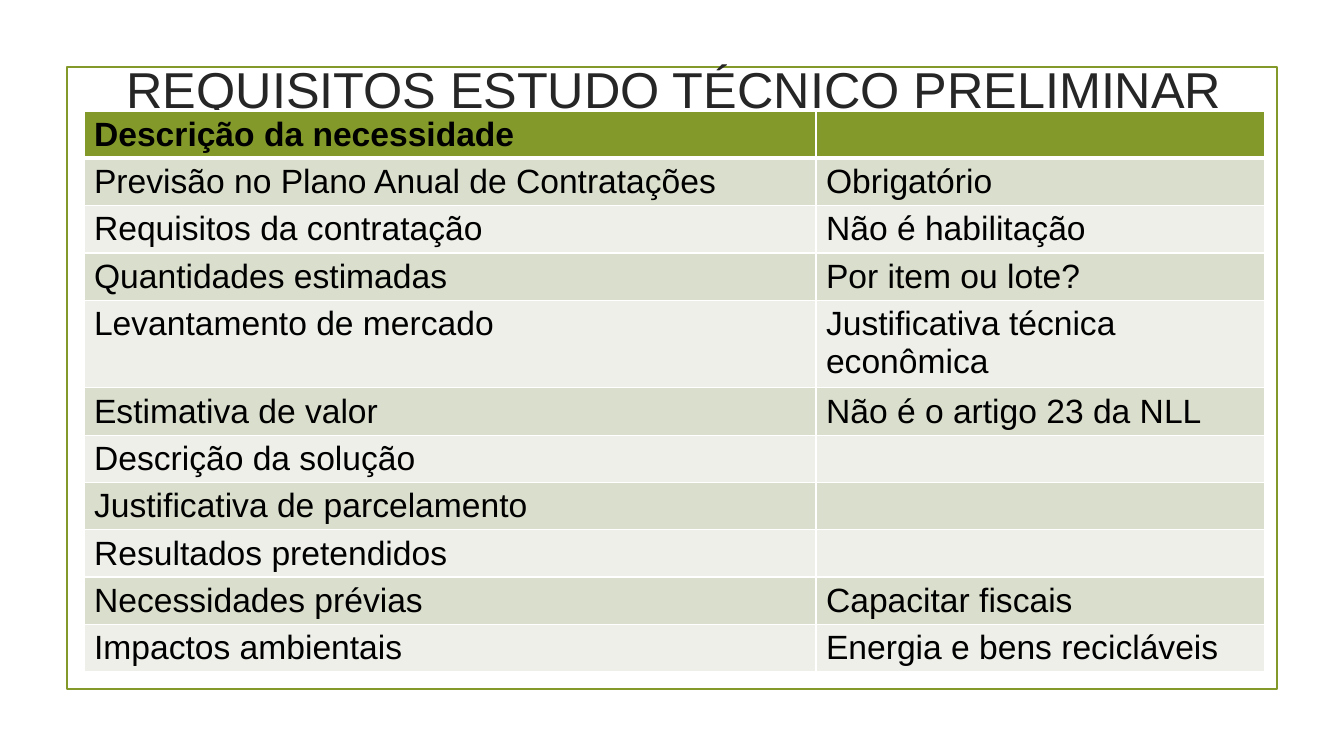
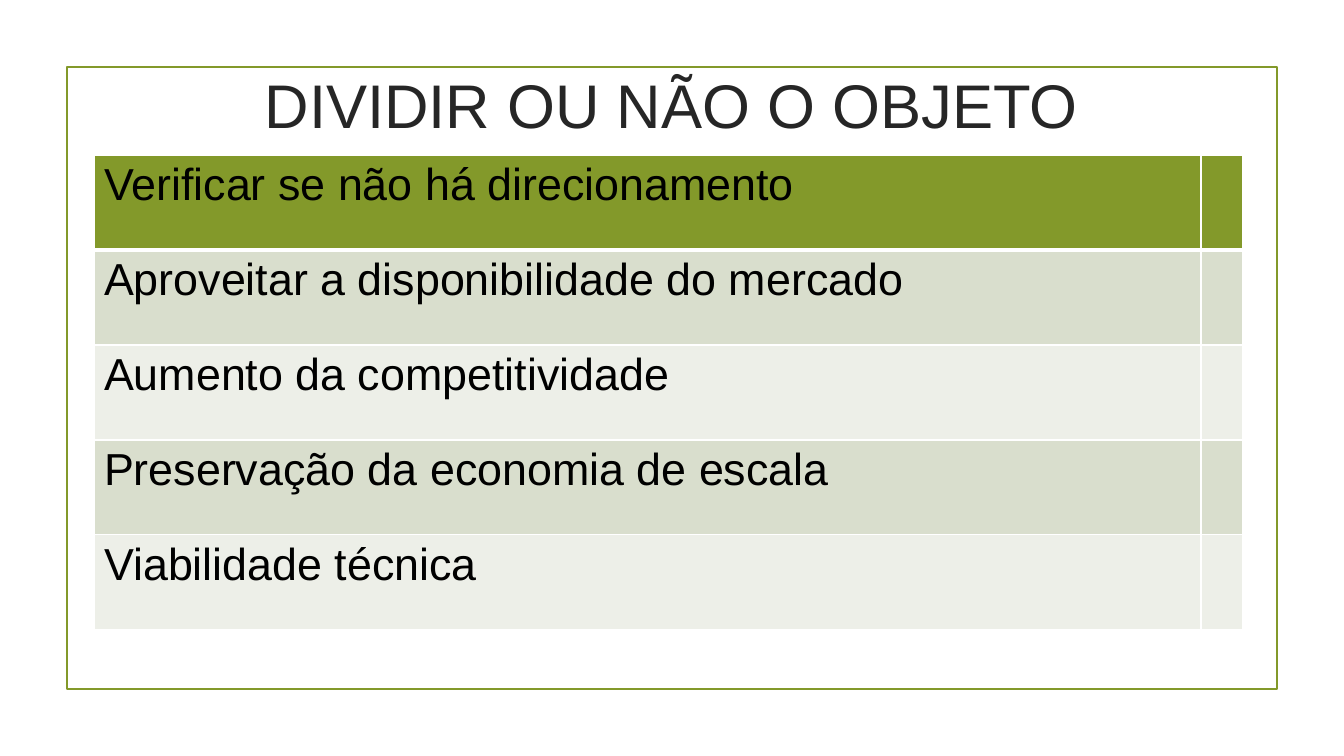
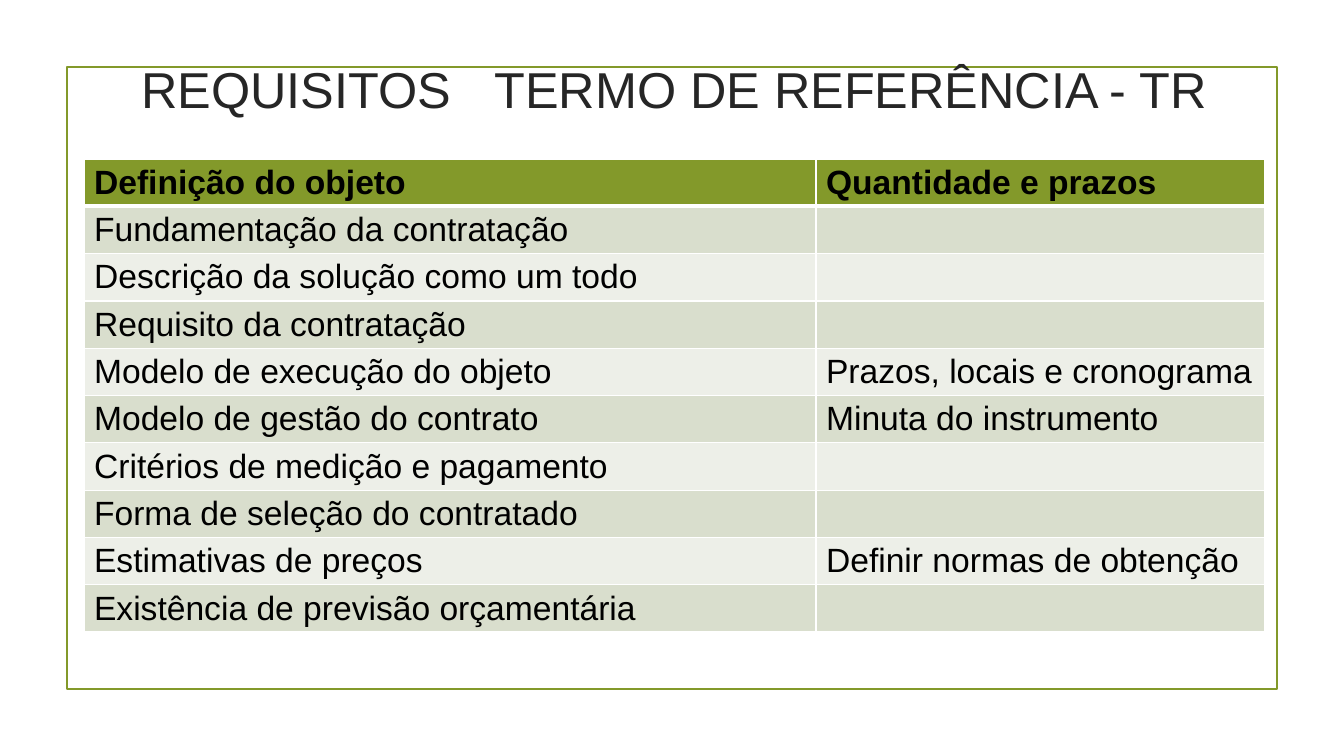
import dataclasses

import pptx
import pptx.dml.color
import pptx.enum.shapes
import pptx.enum.text
import pptx.oxml.ns
import pptx.util
from lxml import etree

SLIDE_WIDTH, SLIDE_HEIGHT = 1344, 756
EMU_PER_PX = 12192000 / SLIDE_WIDTH


@dataclasses.dataclass(frozen=True)
class Theme:
    font: str = "Arial"
    accent: str = "83992A"
    title: str = "262626"
    body: str = "000000"
    grid: str = "FFFFFF"
    bands: tuple = ("D9DECD", "EDEFE8")
    frame_line: float = 1.25
    grid_line: int = 1
    header_line: int = 3
    title_size: int = 36
    title_size_large: int = 44
    cell_size: int = 24
    cell_size_large: int = 32


THEME = Theme()

# Boxes are left, top, width, height
FRAME = (67, 67, 1210, 622)
WIDE_TITLE = (84, 16, 1181, 144)
NARROW_TITLE = (143, 32, 1058, 144)
TITLE_TAB = 353
WIDE_COLUMNS = (732, 449)
CELL_MARGIN_TOP, CELL_MARGIN_BOTTOM = 5, 2

STUDY_ROWS = [
    ("Descrição da necessidade", ""),
    ("Previsão no Plano Anual de Contratações", "Obrigatório"),
    ("Requisitos da contratação", "Não é habilitação"),
    ("Quantidades estimadas", "Por item ou lote?"),
    ("Levantamento de mercado", "Justificativa técnica econômica"),
    ("Estimativa de valor", "Não é o artigo 23 da NLL"),
    ("Descrição da solução", ""),
    ("Justificativa de parcelamento", ""),
    ("Resultados pretendidos", ""),
    ("Necessidades prévias", "Capacitar fiscais"),
    ("Impactos ambientais", "Energia e bens recicláveis"),
]
DIVISION_ROWS = [
    ("Verificar se não há direcionamento", ""),
    ("Aproveitar a disponibilidade do mercado", ""),
    ("Aumento da competitividade", ""),
    ("Preservação da economia de escala", ""),
    ("Viabilidade técnica", ""),
]
REFERENCE_ROWS = [
    ("Definição do objeto", "Quantidade e prazos"),
    ("Fundamentação da contratação", ""),
    ("Descrição da solução como um todo", ""),
    ("Requisito da contratação", ""),
    ("Modelo de execução do objeto", "Prazos, locais e cronograma"),
    ("Modelo de gestão do contrato", "Minuta do instrumento"),
    ("Critérios de medição e pagamento", ""),
    ("Forma de seleção do contratado", ""),
    ("Estimativas de preços", "Definir normas de obtenção"),
    ("Existência de previsão orçamentária", ""),
]


def px(length):
    return pptx.util.Emu(round(length * EMU_PER_PX))


def rgb(value):
    return pptx.dml.color.RGBColor.from_string(value)


def add_span(para, text, size, color, bold=False):
    span = para.add_run()
    span.text = text
    span.font.name = THEME.font
    span.font.size = pptx.util.Pt(size)
    span.font.bold = bold
    span.font.color.rgb = rgb(color)


def add_frame(page, box):
    frame = page.shapes.add_shape(
        pptx.enum.shapes.MSO_SHAPE.RECTANGLE, *map(px, box))
    frame.shadow.inherit = False
    frame.fill.background()
    frame.line.color.rgb = rgb(THEME.accent)
    frame.line.width = pptx.util.Pt(THEME.frame_line)


def add_title(page, box, text, size):
    text_frame = page.shapes.add_textbox(*map(px, box)).text_frame
    text_frame.word_wrap = True
    text_frame.vertical_anchor = pptx.enum.text.MSO_ANCHOR.MIDDLE
    para = text_frame.paragraphs[0]
    para.alignment = pptx.enum.text.PP_ALIGN.CENTER
    if "\t" in text:
        qn = pptx.oxml.ns.qn
        tabs = etree.SubElement(para._p.get_or_add_pPr(), qn("a:tabLst"))
        etree.SubElement(tabs, qn("a:tab"), pos=str(px(TITLE_TAB)), algn="l")
    add_span(para, text, size, THEME.title)


def set_borders(cell, top, bottom):
    qn = pptx.oxml.ns.qn
    properties = cell._tc.get_or_add_tcPr()
    widths = {"L": THEME.grid_line, "R": THEME.grid_line, "T": top, "B": bottom}
    for side, width in widths.items():
        line = etree.SubElement(properties, qn("a:ln" + side),
                                w=str(pptx.util.Pt(width)))
        fill = etree.SubElement(line, qn("a:solidFill"))
        etree.SubElement(fill, qn("a:srgbClr"), val=THEME.grid)


def add_grid(page, box, columns, row_height, rows, size, bold_header):
    holder = page.shapes.add_table(len(rows), len(columns), *map(px, box))
    table = holder.table
    table.horz_banding = False
    for column, width in zip(table.columns, columns):
        column.width = px(width)
    for row_index, texts in enumerate(rows):
        table.rows[row_index].height = px(row_height)
        header = row_index == 0
        color = THEME.accent if header else THEME.bands[(row_index - 1) % 2]
        # The heavy rule is shared by the header and the row below it
        above = THEME.header_line if row_index == 1 else THEME.grid_line
        below = THEME.header_line if header else THEME.grid_line
        for column_index, text in enumerate(texts):
            cell = table.cell(row_index, column_index)
            cell.margin_top = px(CELL_MARGIN_TOP)
            cell.margin_bottom = px(CELL_MARGIN_BOTTOM)
            set_borders(cell, above, below)
            cell.fill.solid()
            cell.fill.fore_color.rgb = rgb(color)
            if text:
                add_span(cell.text_frame.paragraphs[0], text, size,
                         THEME.body, header and bold_header)
    # Row heights reset the outer height, so it is set last
    holder.height = px(box[3])


def add_page(deck, title, title_box, title_size, **grid):
    page = deck.slides.add_slide(deck.slide_layouts[6])
    add_frame(page, FRAME)
    add_title(page, title_box, title, title_size)
    add_grid(page, **grid)


def add_requirements_page(deck, title, top, height, rows):
    add_page(deck, title, WIDE_TITLE, THEME.title_size,
             box=(84, top, sum(WIDE_COLUMNS), height),
             columns=WIDE_COLUMNS, row_height=47,
             rows=rows, size=THEME.cell_size, bold_header=True)


def add_division_page(deck):
    add_page(deck, "DIVIDIR OU NÃO O OBJETO", NARROW_TITLE,
             THEME.title_size_large,
             box=(94, 155, 1149, 477), columns=(1107, 42), row_height=95,
             rows=DIVISION_ROWS, size=THEME.cell_size_large,
             bold_header=False)


def main():
    deck = pptx.Presentation()
    deck.slide_width, deck.slide_height = px(SLIDE_WIDTH), px(SLIDE_HEIGHT)
    add_requirements_page(deck, "REQUISITOS ESTUDO TÉCNICO PRELIMINAR",
                          111, 595, STUDY_ROWS)
    add_division_page(deck)
    add_requirements_page(deck, "REQUISITOS \tTERMO DE REFERÊNCIA - TR",
                          159, 504, REFERENCE_ROWS)
    deck.save("out.pptx")


if __name__ == "__main__":
    main()
